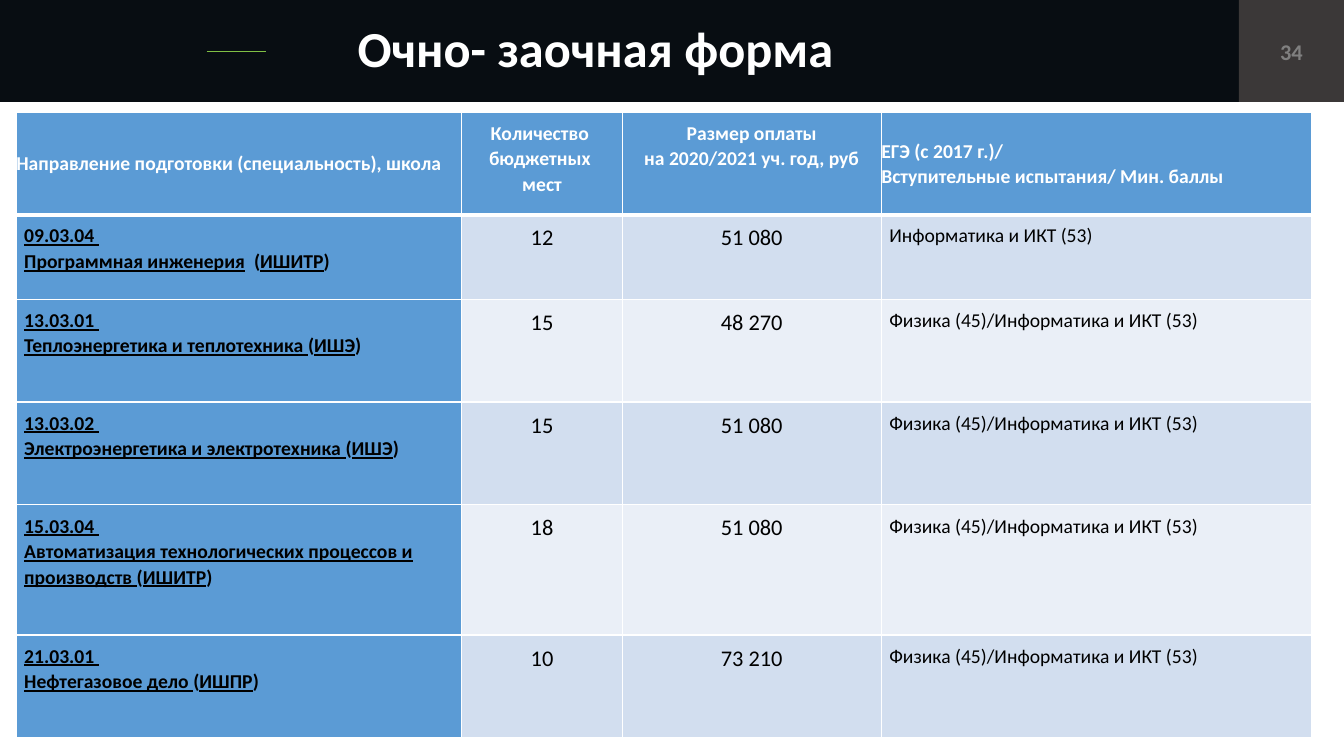
from dataclasses import dataclass

from pptx import Presentation
from pptx.dml.color import RGBColor
from pptx.enum.shapes import MSO_CONNECTOR, MSO_SHAPE
from pptx.enum.text import MSO_ANCHOR, MSO_AUTO_SIZE, PP_ALIGN
from pptx.oxml import parse_xml
from pptx.oxml.ns import nsdecls
from pptx.util import Cm, Pt


@dataclass(frozen=True)
class Theme:
    font: str = "Calibri"
    band: str = "080D12"
    corner: str = "3B3838"
    accent: str = "80BF44"
    number: str = "808080"
    white: str = "FFFFFF"
    black: str = "000000"
    head: str = "5B9BD5"
    odd: str = "D2DEEF"
    even: str = "EAEFF7"
    title_size: int = 36
    value_size: int = 16
    text_size: int = 14


THEME = Theme()
SLIDE_W, SLIDE_H = Cm(33.87), Cm(19.05)
BAND_H = Cm(2.57)
CORNER_X = Cm(31.22)

COLUMN_WIDTHS = [11.23, 4.04, 6.53, 10.85]
ROW_HEIGHTS = [2.59, 2.13, 2.59, 2.59, 3.28, 2.59]
HEADINGS = [
    ["Направление подготовки (специальность), школа"],
    ["Количество  бюджетных ", "мест"],
    ["Размер оплаты\nна 2020/2021 уч. год, руб"],
    ["ЕГЭ (с 2017 г.)/", "Вступительные испытания/ Мин. баллы"],
]
PHYSICS = "Физика (45)/Информатика и ИКТ (53)"
# code, programme, opening bracket, school, places, fee, exams
PROGRAMMES = [
    ("09.03.04 ", "Программная инженерия", "  (", "ИШИТР", "12", "51 080",
     "Информатика и ИКТ (53)"),
    ("13.03.01 ", "Теплоэнергетика и теплотехника ", "(", "ИШЭ", "15", "48 270", PHYSICS),
    ("13.03.02 ", "Электроэнергетика и электротехника ", "(", "ИШЭ", "15", "51 080", PHYSICS),
    ("15.03.04 ", "Автоматизация технологических процессов и производств ", "(", "ИШИТР",
     "18", "51 080", PHYSICS),
    ("21.03.01 ", "Нефтегазовое дело ", "(", "ИШПР", "10", "73 210", PHYSICS),
]


def rgb(color):
    return RGBColor.from_string(color)


def add_run(p, text, size, color, bold=False, underline=False):
    """Add text to a paragraph; each newline becomes a line break."""
    for i, line in enumerate(text.split("\n")):
        if i:
            p.add_line_break()
        r = p.add_run()
        r.text = line
        r.font.name = THEME.font
        r.font.size = Pt(size)
        r.font.bold = bold
        r.font.underline = underline
        r.font.color.rgb = rgb(color)


def add_block(s, left, width, color):
    sp = s.shapes.add_shape(MSO_SHAPE.RECTANGLE, left, 0, width, BAND_H)
    sp.shadow.inherit = False
    sp.fill.solid()
    sp.fill.fore_color.rgb = rgb(color)
    sp.line.fill.background()


def add_dash(s):
    y = Cm(1.3)
    line = s.shapes.add_connector(MSO_CONNECTOR.STRAIGHT, Cm(5.21), y, Cm(6.71), y)
    line.line.color.rgb = rgb(THEME.accent)
    line.line.width = Pt(0.5)
    line._element.spPr.append(parse_xml(f"<a:effectLst {nsdecls('a')}/>"))


def place_title(s, text):
    """Move the title placeholder onto the band, in front of it."""
    sp = s.shapes.title
    sp.left, sp.top, sp.width, sp.height = Cm(8.25), 0, CORNER_X - Cm(8.25), BAND_H
    s.shapes._spTree.append(sp._element)
    tf = sp.text_frame
    tf.auto_size = MSO_AUTO_SIZE.NONE
    tf.vertical_anchor = MSO_ANCHOR.MIDDLE
    tf.margin_left = Cm(0.76)
    p = tf.paragraphs[0]
    p.alignment = PP_ALIGN.LEFT
    p.line_spacing = 0.9
    add_run(p, text, THEME.title_size, THEME.white, bold=True)


def add_page_number(s, text):
    tf = s.shapes.add_textbox(CORNER_X, Cm(0.79), SLIDE_W - CORNER_X, Cm(1.02)).text_frame
    tf.word_wrap = True
    tf.vertical_anchor = MSO_ANCHOR.MIDDLE
    p = tf.paragraphs[0]
    p.alignment = PP_ALIGN.CENTER
    add_run(p, text, THEME.value_size, THEME.number, bold=True)


def set_borders(cell, top, bottom):
    tcPr = cell._tc.get_or_add_tcPr()
    for side, width in (("L", 1), ("R", 1), ("T", top), ("B", bottom)):
        tcPr.append(parse_xml(
            f'<a:ln{side} {nsdecls("a")} w="{Pt(width)}"><a:solidFill>'
            f'<a:srgbClr val="{THEME.white}"/></a:solidFill></a:ln{side}>'))


def fill_cell(cell, paragraphs, fill, centered=False, flush=False):
    """Write paragraphs, each a list of add_run argument tuples, into a cell."""
    cell.fill.solid()
    cell.fill.fore_color.rgb = rgb(fill)
    margin = Cm(0) if flush else Cm(0.2)
    cell.margin_left = cell.margin_right = cell.margin_top = cell.margin_bottom = margin
    cell.vertical_anchor = MSO_ANCHOR.MIDDLE if flush else MSO_ANCHOR.TOP
    tf = cell.text_frame
    for i, runs in enumerate(paragraphs):
        p = tf.add_paragraph() if i else tf.paragraphs[0]
        p.alignment = PP_ALIGN.CENTER if centered else PP_ALIGN.LEFT
        p.line_spacing = 1.07
        for run in runs:
            add_run(p, *run)


def fill_programme_row(cells, programme, fill):
    code, name, bracket, school, places, fee, exams = programme
    label = [(text, THEME.text_size, THEME.black, True, underline) for text, underline in (
        (f"{code}\n{name}", True), (bracket, False), (school, True), (")", False))]
    fill_cell(cells[0], [label], THEME.head)
    for cell, value in zip(cells[1:3], (places, fee)):
        fill_cell(cell, [[(value, THEME.value_size, THEME.black)]], fill, centered=True)
    fill_cell(cells[3], [[(exams, THEME.text_size, THEME.black)]], fill)


def add_programme_table(s):
    frame = s.shapes.add_table(len(ROW_HEIGHTS), len(COLUMN_WIDTHS), Cm(0.41), Cm(2.82),
                               Cm(sum(COLUMN_WIDTHS)), Cm(sum(ROW_HEIGHTS)))
    table = frame.table
    table.horz_banding = False
    for column, width in zip(table.columns, COLUMN_WIDTHS):
        column.width = Cm(width)
    for i, (row, height) in enumerate(zip(table.rows, ROW_HEIGHTS)):
        row.height = Cm(height)
        for cell in row.cells:
            set_borders(cell, top=3 if i == 1 else 1, bottom=3 if i == 0 else 1)
    for i, lines in enumerate(HEADINGS):
        outer = i in (0, len(HEADINGS) - 1)
        runs = [[(line, THEME.text_size, THEME.white, True)] for line in lines]
        fill_cell(table.cell(0, i), runs, THEME.head, centered=not outer, flush=outer)
    for i, programme in enumerate(PROGRAMMES, start=1):
        fill_programme_row(list(table.rows[i].cells), programme,
                           THEME.odd if i % 2 else THEME.even)


def main():
    prs = Presentation()
    prs.slide_width, prs.slide_height = SLIDE_W, SLIDE_H
    s = prs.slides.add_slide(prs.slide_layouts[5])
    add_block(s, 0, SLIDE_W, THEME.band)
    add_block(s, CORNER_X, SLIDE_W - CORNER_X, THEME.corner)
    add_dash(s)
    place_title(s, "Очно- заочная форма")
    add_programme_table(s)
    add_page_number(s, "34")
    prs.save("out.pptx")


if __name__ == "__main__":
    main()
